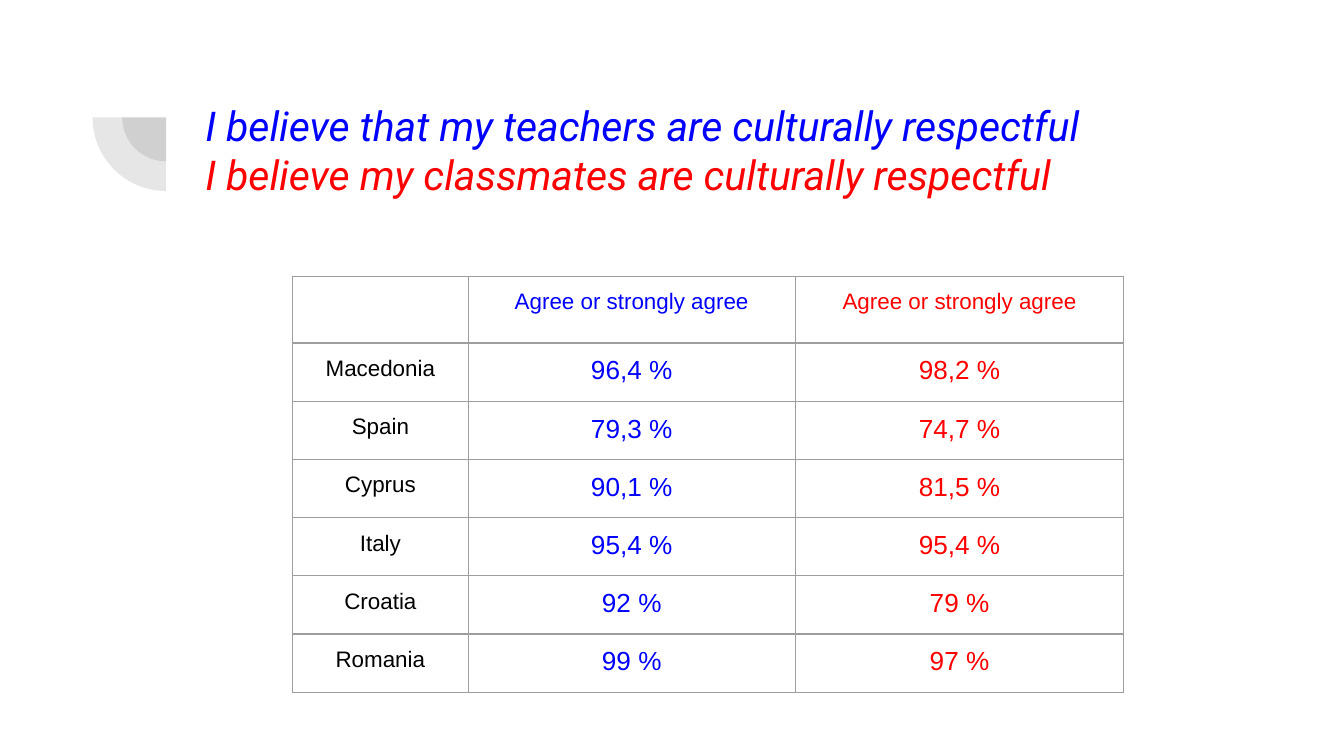
from dataclasses import dataclass

from lxml import etree
from pptx import Presentation
from pptx import util as u
from pptx.dml.color import RGBColor
from pptx.enum import shapes, text
from pptx.oxml import ns
from pptx.slide import Slide
from pptx.table import _Cell
from pptx.text.text import _Paragraph

BLUE = RGBColor(0x00, 0x00, 0xFF)
RED = RGBColor(0xFF, 0x00, 0x00)
BLACK = RGBColor(0x00, 0x00, 0x00)
WHITE = RGBColor(0xFF, 0xFF, 0xFF)
DARK_GREY = RGBColor(0x42, 0x42, 0x42)
BORDER_GREY = RGBColor(0x9E, 0x9E, 0x9E)
INSET = u.Cm(0.25)


@dataclass(frozen=True)
class TextStyle:
    font: str
    size: int
    color: RGBColor
    italic: bool = False


@dataclass(frozen=True)
class Answer:
    country: str
    teachers: str
    classmates: str


TITLE_LINES = [
    ("I believe that my teachers are culturally respectful", BLUE),
    ("I believe my classmates are culturally respectful", RED),
]
HEADER = Answer("", "Agree or strongly agree", "Agree or strongly agree")
ANSWERS = [
    Answer("Macedonia", "96,4 %", "98,2 %"),
    Answer("Spain", "79,3 %", "74,7 %"),
    Answer("Cyprus", "90,1 %", "81,5 %"),
    Answer("Italy", "95,4 %", "95,4 %"),
    Answer("Croatia", "92 %", "79 %"),
    Answer("Romania", "99 %", "97 %"),
]
COLUMN_WIDTHS = [u.Cm(3.32), u.Cm(6.18), u.Cm(6.21)]
ROW_HEIGHTS = [u.Cm(1.14)] + [u.Cm(1.1)] * len(ANSWERS)


def add_run(paragraph: _Paragraph, content: str, style: TextStyle) -> None:
    run = paragraph.add_run()
    run.text = content
    run.font.name = style.font
    run.font.size = u.Pt(style.size)
    run.font.italic = style.italic
    run.font.color.rgb = style.color


def add_quarter(slide: Slide, radius: float) -> None:
    """Draw a translucent quarter disc below and left of a fixed centre."""
    center_x, center_y = 3.14, 2.22
    shape = slide.shapes.add_shape(
        shapes.MSO_SHAPE.PIE, u.Cm(center_x - radius), u.Cm(center_y - radius),
        u.Cm(2 * radius), u.Cm(2 * radius))
    # Angles of 180 and 270 degrees, in the units of the preset
    shape.adjustments[0] = 108
    shape.adjustments[1] = 162
    shape.rotation = 270
    shape.shadow.inherit = False
    shape.line.fill.background()
    shape.fill.solid()
    shape.fill.fore_color.rgb = DARK_GREY
    color = shape.fill._xPr.find(".//" + ns.qn("a:srgbClr"))
    etree.SubElement(color, ns.qn("a:alpha"), val="13000")


def add_title(slide: Slide) -> None:
    box = slide.shapes.add_textbox(u.Cm(3.63), u.Cm(1.65), u.Cm(19.53), u.Cm(2.77))
    frame = box.text_frame
    frame.word_wrap = True
    frame.vertical_anchor = text.MSO_ANCHOR.TOP
    frame.margin_left = frame.margin_right = INSET
    frame.margin_top = frame.margin_bottom = INSET
    for index, (line, color) in enumerate(TITLE_LINES):
        paragraph = frame.add_paragraph() if index else frame.paragraphs[0]
        add_run(paragraph, line, TextStyle("Roboto", 22, color, italic=True))


def set_borders(cell: _Cell) -> None:
    properties = cell._tc.get_or_add_tcPr()
    for index, side in enumerate(("lnL", "lnR", "lnT", "lnB")):
        line = etree.Element(ns.qn(f"a:{side}"), w=str(u.Pt(0.75)))
        fill = etree.SubElement(line, ns.qn("a:solidFill"))
        etree.SubElement(fill, ns.qn("a:srgbClr"), val=str(BORDER_GREY))
        properties.insert(index, line)


def fill_cell(cell: _Cell, content: str, style: TextStyle) -> None:
    cell.margin_left = cell.margin_right = INSET
    cell.margin_top = cell.margin_bottom = INSET
    cell.fill.solid()
    cell.fill.fore_color.rgb = WHITE
    set_borders(cell)
    paragraph = cell.text_frame.paragraphs[0]
    paragraph.alignment = text.PP_ALIGN.CENTER
    add_run(paragraph, content, style)


def add_answer_table(slide: Slide) -> None:
    rows = [HEADER] + ANSWERS
    table = slide.shapes.add_table(
        len(rows), len(COLUMN_WIDTHS), u.Cm(5.53), u.Cm(5.22),
        sum(COLUMN_WIDTHS), sum(ROW_HEIGHTS)).table
    table.first_row = False
    table.horz_banding = False
    for column, width in zip(table.columns, COLUMN_WIDTHS):
        column.width = width
    for row, height, answer in zip(table.rows, ROW_HEIGHTS, rows):
        row.height = height
        value_size = 12 if answer is HEADER else 14
        fill_cell(row.cells[0], answer.country, TextStyle("Arial", 12, BLACK))
        fill_cell(row.cells[1], answer.teachers, TextStyle("Arial", value_size, BLUE))
        fill_cell(row.cells[2], answer.classmates, TextStyle("Arial", value_size, RED))


def main() -> None:
    presentation = Presentation()
    presentation.slide_width = u.Cm(25.4)
    presentation.slide_height = u.Cm(14.29)
    slide = presentation.slides.add_slide(presentation.slide_layouts[6])

    # Corner ornament
    for radius in (0.83, 1.39):
        add_quarter(slide, radius)

    # Statements and answers
    add_title(slide)
    add_answer_table(slide)

    presentation.save("out.pptx")


if __name__ == "__main__":
    main()
